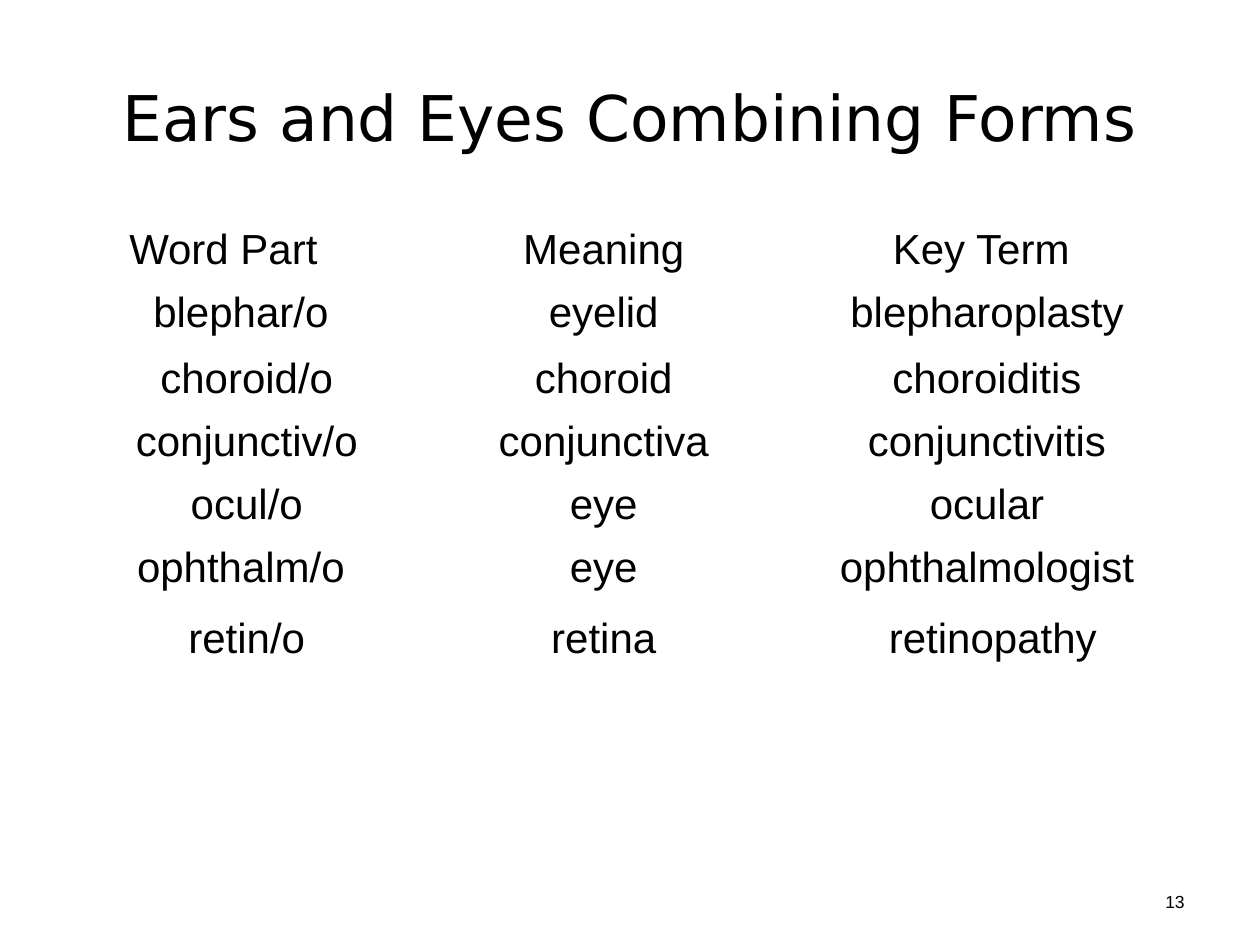
from pptx import Presentation
from pptx.dml.color import RGBColor
from pptx.enum.text import MSO_ANCHOR, PP_ALIGN
from pptx.util import Pt

CENTER = PP_ALIGN.CENTER
RIGHT = PP_ALIGN.RIGHT
TOP = MSO_ANCHOR.TOP
MIDDLE = MSO_ANCHOR.MIDDLE

COLORS = {"text": "000000"}
BODY_FONT = "Arial"
TITLE_FONT = "DejaVu Sans"
SPACE = 6.67
MARGIN_X, MARGIN_Y = 5.76, 3.6

COLUMN_WIDTHS = [210, 198, 240]
ROW_HEIGHTS = [36, 37.5, 36, 36, 36, 40.5, 36]
TERMS = [
    ("Word Part", "Meaning", "Key Term"),
    ("blephar/o", "eyelid", "blepharoplasty"),
    ("choroid/o", "choroid", "choroiditis"),
    ("conjunctiv/o", "conjunctiva", "conjunctivitis"),
    ("ocul/o", "eye", "ocular"),
    ("ophthalm/o", "eye", "ophthalmologist"),
    ("retin/o", "retina", "retinopathy"),
]
LEFT_INDENTS = {"retinopathy": SPACE}
RIGHT_INDENTS = {
    "Word Part": 4 * SPACE,
    "Key Term": SPACE,
    "blephar/o": SPACE,
    "ophthalm/o": SPACE,
}


def write_text(text_frame, text, size, font_name, alignment):
    paragraph = text_frame.paragraphs[0]
    paragraph.text = text
    paragraph.alignment = alignment
    paragraph.font.size = Pt(size)
    paragraph.font.name = font_name
    paragraph.font.color.rgb = RGBColor.from_string(COLORS["text"])


def add_label(slide, box, text, size, font_name, alignment):
    shape = slide.shapes.add_textbox(*map(Pt, box))
    text_frame = shape.text_frame
    text_frame.word_wrap = True
    text_frame.vertical_anchor = MIDDLE
    write_text(text_frame, text, size, font_name, alignment)


def add_terms_table(slide, left, top):
    frame = slide.shapes.add_table(
        len(TERMS), len(COLUMN_WIDTHS), Pt(left), Pt(top),
        Pt(sum(COLUMN_WIDTHS)), Pt(sum(ROW_HEIGHTS)),
    )
    table = frame.table
    table.first_row = False
    table.horz_banding = False
    for column, width in zip(table.columns, COLUMN_WIDTHS):
        column.width = Pt(width)
    for row, height, terms in zip(table.rows, ROW_HEIGHTS, TERMS):
        row.height = Pt(height)
        for cell, term in zip(row.cells, terms):
            cell.fill.background()
            cell.vertical_anchor = TOP
            cell.margin_left = Pt(MARGIN_X + LEFT_INDENTS.get(term, 0))
            cell.margin_right = Pt(MARGIN_X + RIGHT_INDENTS.get(term, 0))
            cell.margin_top = cell.margin_bottom = Pt(MARGIN_Y)
            write_text(cell.text_frame, term, 24, BODY_FONT, CENTER)


def main():
    presentation = Presentation()
    presentation.slide_width = Pt(720)
    presentation.slide_height = Pt(540)
    slide = presentation.slides.add_slide(presentation.slide_layouts[6])
    add_label(slide, (36, 21.6, 648, 90), "Ears and Eyes Combining Forms",
              36, TITLE_FONT, CENTER)
    add_terms_table(slide, 36, 126)
    add_label(slide, (643.5, 493.5, 40.5, 43), "13", 10, BODY_FONT, RIGHT)
    presentation.save("out.pptx")


if __name__ == "__main__":
    main()
